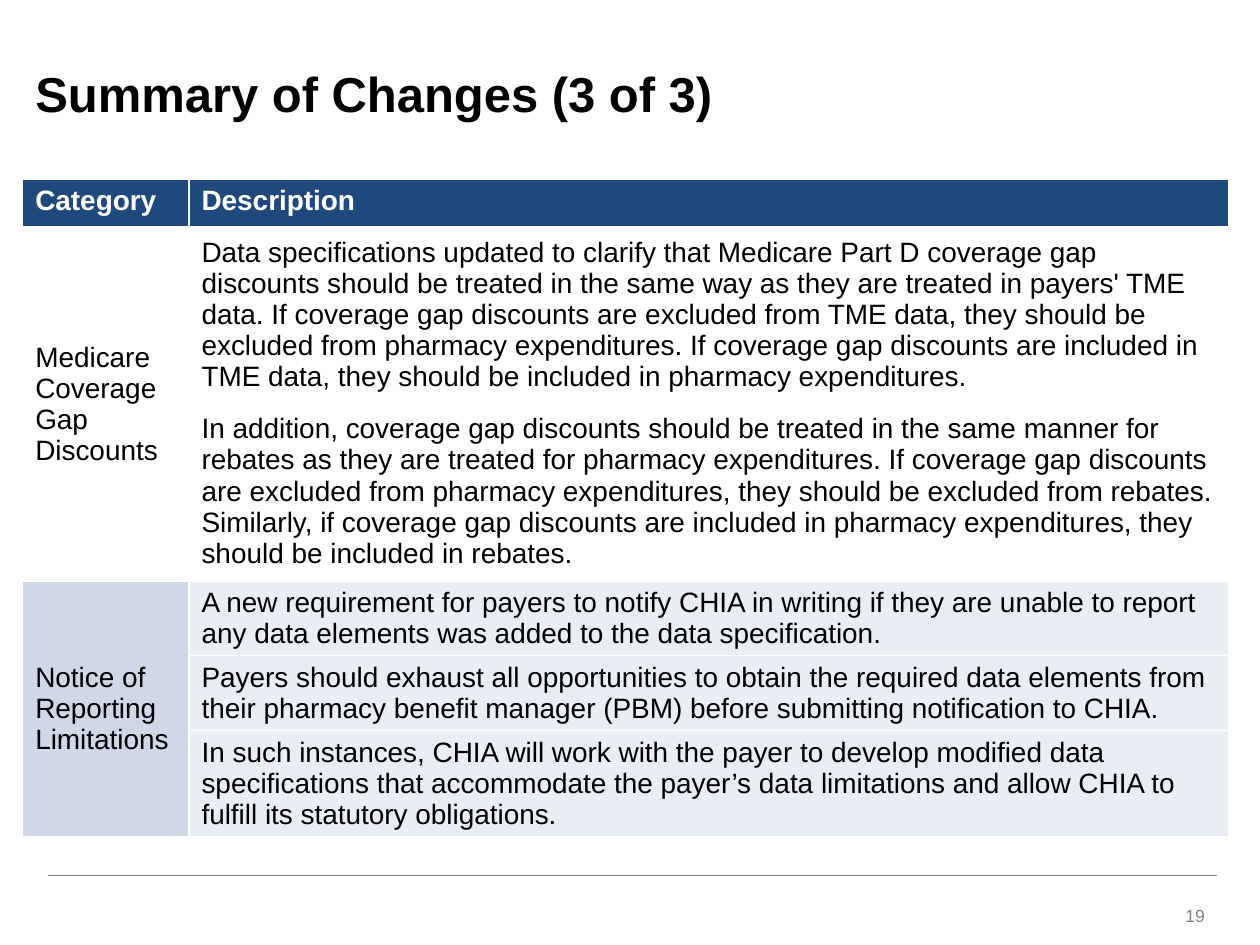
from pptx import Presentation, util as u
from pptx.dml.color import RGBColor
from pptx.enum import shapes, text
from pptx.oxml import parse_xml
from pptx.oxml.ns import nsdecls
from lxml import etree

TITLE = "Summary of Changes (3 of 3)"
HEADERS = ("Category", "Description")
# category, category fill, description fill, descriptions
GROUPS = [
    ("Medicare Coverage Gap Discounts", None, None, [
        "Data specifications updated to clarify that Medicare Part D coverage gap discounts "
        "should be treated in the same way as they are treated in payers' TME data. If coverage "
        "gap discounts are excluded from TME data, they should be excluded from pharmacy "
        "expenditures. If coverage gap discounts are included in TME data, they should be "
        "included in pharmacy expenditures.",
        "In addition, coverage gap discounts should be treated in the same manner for rebates "
        "as they are treated for pharmacy expenditures. If coverage gap discounts are excluded "
        "from pharmacy expenditures, they should be excluded from rebates. Similarly, if "
        "coverage gap discounts are included in pharmacy expenditures, they should be included "
        "in rebates.",
    ]),
    ("Notice of Reporting Limitations", "D0D8E8", "E9EDF4", [
        "A new requirement for payers to notify CHIA in writing if they are unable to report "
        "any data elements was added to the data specification.",
        "Payers should exhaust all opportunities to obtain the required data elements from "
        "their pharmacy benefit manager (PBM) before submitting notification to CHIA.",
        "In such instances, CHIA will work with the payer to develop modified data "
        "specifications that accommodate the payer’s data limitations and allow CHIA to "
        "fulfill its statutory obligations.",
    ]),
]
COLS = (1.32, 8.25)
ROWS = (0.39, 1.38, 1.42, 0.59, 0.59, 0.84)
LEFT, TOP = 0.18, 1.42
MIDDLE = text.MSO_ANCHOR.MIDDLE


def rgb(value):
    return RGBColor.from_string(value)


def write(tf, content, size=16, color="000000", bold=False,
          align=text.PP_ALIGN.LEFT, anchor=MIDDLE):
    tf.word_wrap = True
    tf.vertical_anchor = anchor
    p = tf.paragraphs[0]
    p.alignment = align
    r = p.add_run()
    r.text = content
    r.font.name, r.font.size, r.font.bold = "Arial", u.Pt(size), bold
    r.font.color.rgb = rgb(color)


def style_cell(cell, fill, bottom=1):
    if fill:
        cell.fill.solid()
        cell.fill.fore_color.rgb = rgb(fill)
    else:
        cell.fill.background()
    tcPr = cell._tc.get_or_add_tcPr()
    for i, (side, width) in enumerate(zip("LRTB", (1, 1, 1, bottom))):
        tcPr.insert(i, parse_xml(
            f'<a:ln{side} {nsdecls("a")} w="{u.Pt(width)}"><a:solidFill>'
            f'<a:srgbClr val="FFFFFF"/></a:solidFill></a:ln{side}>'))


prs = Presentation()
prs.slide_width, prs.slide_height = u.Inches(10), u.Inches(7.5)
s = prs.slides.add_slide(prs.slide_layouts[5])

# Title
sp = s.shapes.title
sp.left, sp.top, sp.width, sp.height = map(u.Inches, (LEFT, 0.39, 8.49, 0.7))
write(sp.text_frame, TITLE, size=28, bold=True)

# Table
table = s.shapes.add_table(len(ROWS), len(COLS), *map(
    u.Inches, (LEFT, TOP, sum(COLS), sum(ROWS)))).table
for col, width in zip(table.columns, COLS):
    col.width = u.Inches(width)
for row, height in zip(table.rows, ROWS):
    row.height = u.Inches(height)

for c, header in enumerate(HEADERS):
    cell = table.cell(0, c)
    write(cell.text_frame, header, color="FFFFFF", bold=True)
    cell.vertical_anchor = text.MSO_ANCHOR.TOP
    style_cell(cell, "1F497D", bottom=3)

first = 1
for category, category_fill, fill, descriptions in GROUPS:
    last = first + len(descriptions) - 1
    for r, description in enumerate(descriptions, first):
        style_cell(table.cell(r, 0), category_fill)
        cell = table.cell(r, 1)
        write(cell.text_frame, description)
        cell.vertical_anchor = text.MSO_ANCHOR.TOP if fill else MIDDLE
        style_cell(cell, fill)
    cell = table.cell(first, 0)
    cell.merge(table.cell(last, 0))
    write(cell.text_frame, category)
    cell.vertical_anchor = MIDDLE
    first = last + 1

# Footer rule and page number
rule = s.shapes.add_connector(shapes.MSO_CONNECTOR.STRAIGHT, *map(
    u.Inches, (0.38, 6.95, 9.66, 6.95)))
rule.line.color.rgb, rule.line.width = rgb("808080"), u.Pt(0.5)
etree.SubElement(rule._element.spPr,
                 "{http://schemas.openxmlformats.org/drawingml/2006/main}effectLst")
box = s.shapes.add_textbox(*map(u.Inches, (7.33, 7.07, 2.33, 0.4)))
write(box.text_frame, "19", size=10, color="7F7F7F", align=text.PP_ALIGN.RIGHT)

prs.save("out.pptx")
